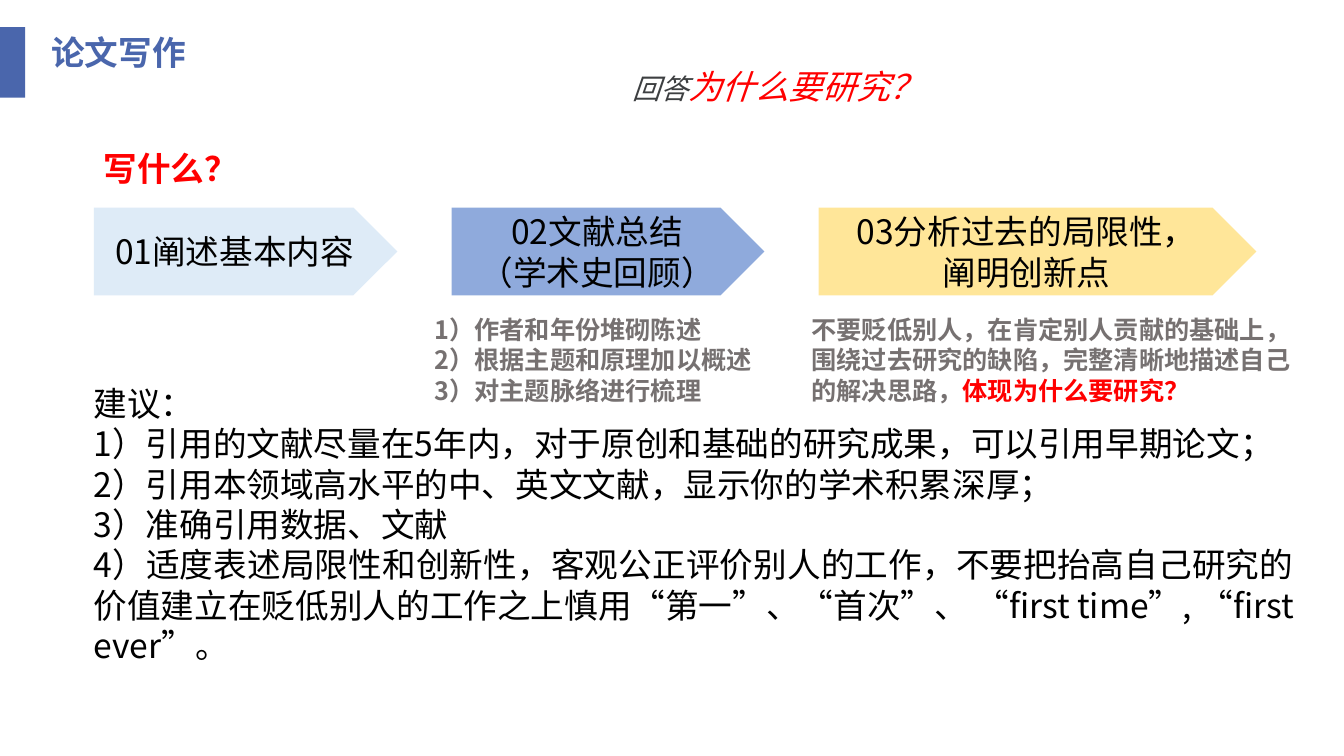
from dataclasses import dataclass

from lxml.etree import SubElement
from pptx import Presentation
from pptx.dml.color import RGBColor
from pptx.enum.shapes import MSO_SHAPE
from pptx.enum.text import MSO_ANCHOR, MSO_AUTO_SIZE, PP_ALIGN
from pptx.oxml.ns import qn
from pptx.shapes.autoshape import Shape
from pptx.slide import Slide
from pptx.text.text import Font
from pptx.util import Inches, Pt

SLIDE_WIDTH = Inches(13.33)
SLIDE_HEIGHT = Inches(7.5)
TYPEFACE = "Noto Sans CJK SC"
COLORS = {
    "accent": "4A66AC",
    "red": "FF0000",
    "black": "000000",
    "dark": "3D3F41",
    "gray": "767171",
    "pale_blue": "DEEBF7",
    "blue": "8FAADC",
    "yellow": "FFE699",
}


@dataclass(frozen=True)
class Area:
    """Position and size in percent of the slide."""

    left: float
    top: float
    width: float
    height: float

    def lengths(self) -> tuple[int, int, int, int]:
        return (
            int(SLIDE_WIDTH * self.left / 100),
            int(SLIDE_HEIGHT * self.top / 100),
            int(SLIDE_WIDTH * self.width / 100),
            int(SLIDE_HEIGHT * self.height / 100),
        )


@dataclass(frozen=True)
class TextStyle:
    size: int
    color: str
    bold: bool = False
    italic: bool = False


@dataclass(frozen=True)
class Line:
    text: str
    emphasis: str = ""
    align: PP_ALIGN = PP_ALIGN.LEFT


@dataclass(frozen=True)
class TextBlock:
    area: Area
    style: TextStyle
    lines: tuple[Line, ...]
    wrap: bool = True
    emphasis_size: int = 0


@dataclass(frozen=True)
class Step:
    left: float
    width: float
    fill: str
    lines: tuple[str, ...]


NOTE = TextStyle(18, "gray", bold=True)
BODY = TextStyle(24, "black")
HEADING = TextStyle(24, "accent", bold=True)
SECTION = TextStyle(24, "red", bold=True)
QUESTION = TextStyle(20, "dark", italic=True)
STEP_TOP, STEP_HEIGHT = 27.47, 11.6
NOTE_TOP, NOTE_HEIGHT = 40.93, 13.47
TITLE_TOP = 3.6
LINE_HEIGHT = 6.67

STEPS = (
    Step(6.98, 22.58, "pale_blue", ("01阐述基本内容",)),
    Step(33.61, 23.26, "blue", ("02文献总结", "（学术史回顾）")),
    Step(60.92, 32.56, "yellow", ("03分析过去的局限性，", "阐明创新点")),
)

ADVICE = (
    "1）引用的文献尽量在5年内，对于原创和基础的研究成果，可以引用早期论文；",
    "2）引用本领域高水平的中、英文文献，显示你的学术积累深厚；",
    "3）准确引用数据、文献",
    "4）适度表述局限性和创新性，客观公正评价别人的工作，不要把抬高自己研究的价值"
    "建立在贬低别人的工作之上慎用“第一”、“首次”、 “first time”, “first ever”。",
)

TEXT_BLOCKS = (
    TextBlock(Area(46.29, 8, 23.41, LINE_HEIGHT), QUESTION,
              (Line("回答", "为什么要研究？"),), wrap=False, emphasis_size=24),
    TextBlock(Area(31.58, NOTE_TOP, 26.41, NOTE_HEIGHT), NOTE,
              (Line("1）作者和年份堆砌陈述"),
               Line("2）根据主题和原理加以概述"),
               Line("3）对主题脉络进行梳理"))),
    TextBlock(Area(6.98, 18.93, 11.7, LINE_HEIGHT), SECTION,
              (Line("写什么？"),), wrap=False),
    TextBlock(Area(59.64, NOTE_TOP, 37.36, NOTE_HEIGHT), NOTE,
              (Line("不要贬低别人，在肯定别人贡献的基础上，"),
               Line("围绕过去研究的缺陷，完整清晰地描述自己的解决思路，",
                    "体现为什么要研究？"))),
    TextBlock(Area(6.23, 50, 90.77, 39.07), BODY,
              (Line("建议："),
               *(Line(text, align=PP_ALIGN.JUSTIFY) for text in ADVICE))),
    TextBlock(Area(3.08, TITLE_TOP, 48.76, LINE_HEIGHT), HEADING,
              (Line("论文写作"),)),
)


def rgb(name: str) -> RGBColor:
    return RGBColor.from_string(COLORS[name])


def apply_style(font: Font, style: TextStyle) -> None:
    font.size = Pt(style.size)
    font.bold = style.bold
    font.italic = style.italic
    font.color.rgb = rgb(style.color)
    font.name = TYPEFACE


def write_lines(shape: Shape, lines: tuple[Line, ...], style: TextStyle,
                emphasis_size: int = 0) -> None:
    frame = shape.text_frame
    for index, line in enumerate(lines):
        paragraph = frame.add_paragraph() if index else frame.paragraphs[0]
        paragraph.alignment = line.align
        paragraph.add_run().text = line.text
        apply_style(paragraph.font, style)
        defaults = paragraph._p.pPr.find(qn("a:defRPr"))
        SubElement(defaults, qn("a:ea")).set("typeface", TYPEFACE)
        if line.emphasis:
            run = paragraph.add_run()
            run.text = line.emphasis
            run.font.color.rgb = rgb("red")
            if emphasis_size:
                run.font.size = Pt(emphasis_size)


def add_filled_shape(slide: Slide, kind: MSO_SHAPE, area: Area, fill: str) -> Shape:
    shape = slide.shapes.add_shape(kind, *area.lengths())
    shape.shadow.inherit = False
    shape.fill.solid()
    shape.fill.fore_color.rgb = rgb(fill)
    shape.line.fill.background()
    return shape


def add_step(slide: Slide, step: Step) -> None:
    area = Area(step.left, STEP_TOP, step.width, STEP_HEIGHT)
    shape = add_filled_shape(slide, MSO_SHAPE.PENTAGON, area, step.fill)
    shape.text_frame.vertical_anchor = MSO_ANCHOR.MIDDLE
    lines = tuple(Line(text, align=PP_ALIGN.CENTER) for text in step.lines)
    write_lines(shape, lines, BODY)


def add_text_block(slide: Slide, block: TextBlock) -> None:
    text_box = slide.shapes.add_textbox(*block.area.lengths())
    text_box.text_frame.word_wrap = block.wrap
    text_box.text_frame.auto_size = MSO_AUTO_SIZE.SHAPE_TO_FIT_TEXT
    write_lines(text_box, block.lines, block.style, block.emphasis_size)


def main() -> None:
    presentation = Presentation()
    presentation.slide_width = SLIDE_WIDTH
    presentation.slide_height = SLIDE_HEIGHT
    slide = presentation.slides.add_slide(presentation.slide_layouts[6])
    for step in STEPS:
        add_step(slide, step)
    for block in TEXT_BLOCKS:
        add_text_block(slide, block)
    add_filled_shape(slide, MSO_SHAPE.RECTANGLE, Area(0, TITLE_TOP, 1.88, 9.33), "accent")
    presentation.save("out.pptx")


if __name__ == "__main__":
    main()
